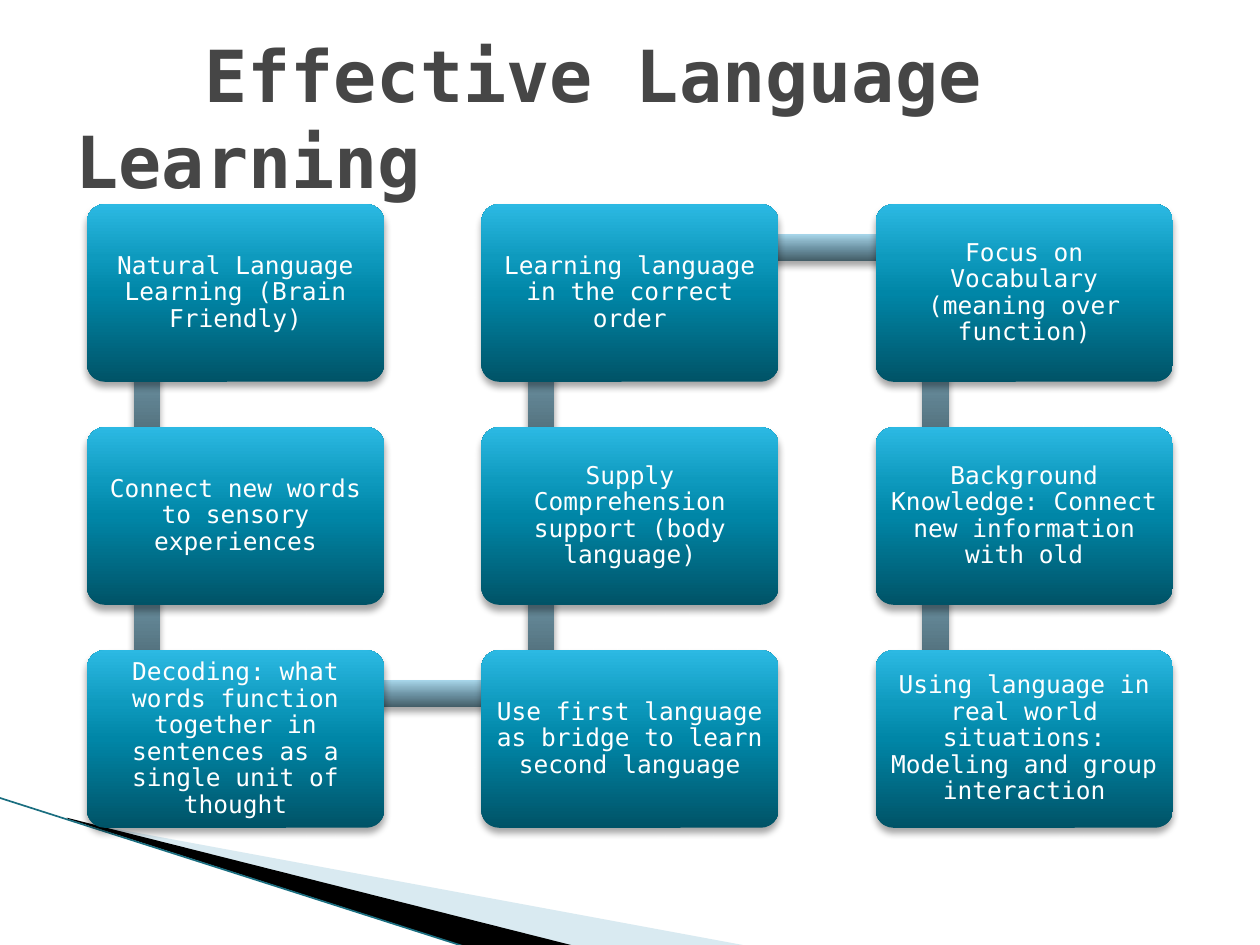
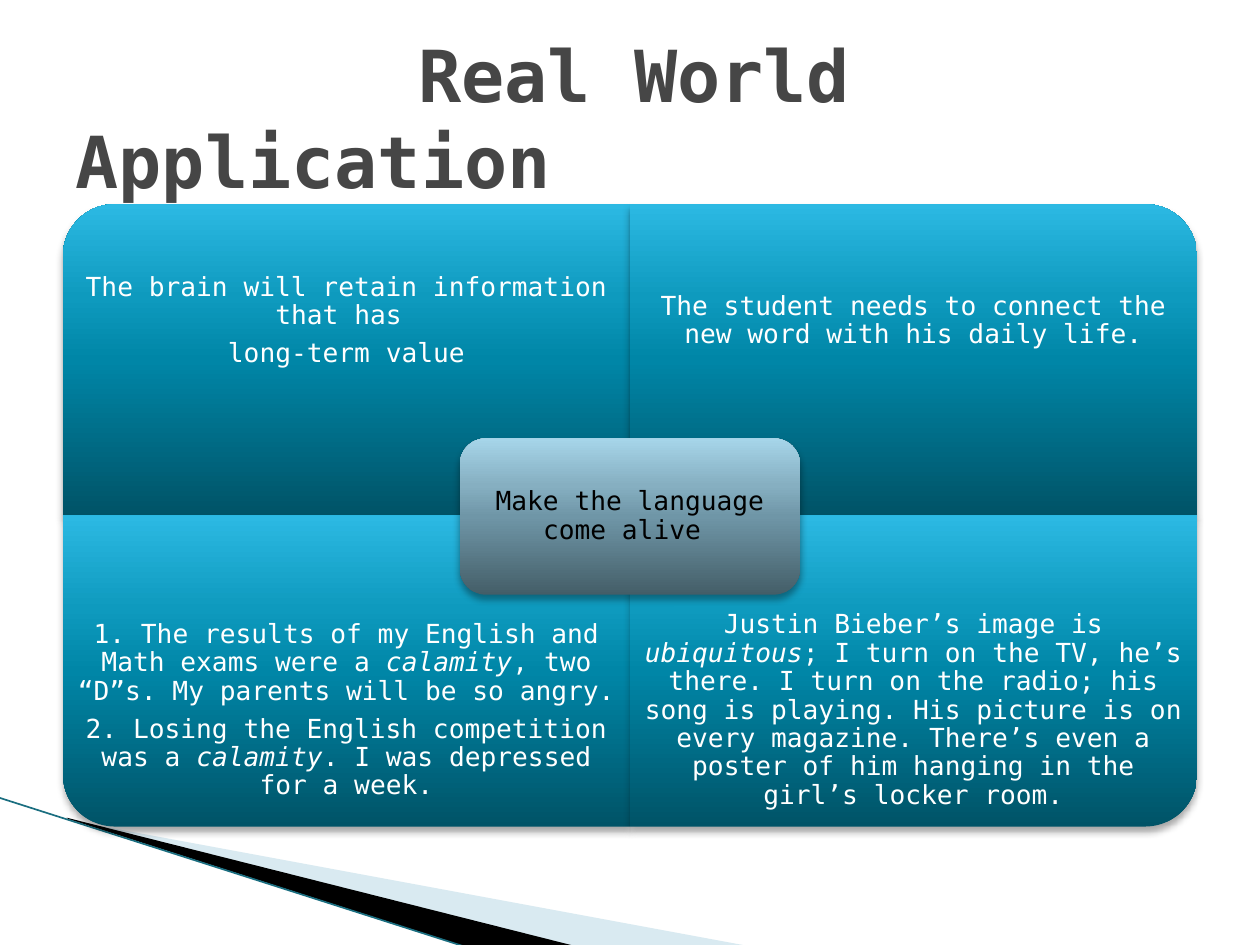
from lxml import etree
from pptx import Presentation, util as u
from pptx.dml.color import RGBColor
from pptx.enum import shapes, text
from pptx.oxml import parse_xml
from pptx.oxml.ns import nsdecls, qn

FONT = "DejaVu Sans Mono"
COLOURS = {"title": "464646", "white": "FFFFFF", "black": "000000",
           "pale band": "A0CBDC", "edge": "1A6E80"}
GRADIENTS = {
    "teal": {0: "005367", 50: "0086A7", 70: "0E9ABE", 100: "2CB9E3"},
    "grey": {0: "445E68", 50: "6F96A7", 70: "86AFC1", 100: "A6D5E9"},
}


def add_glossy(page, kind, left, top, width, height, gradient):
    """Add a shape with an upright gradient, no outline and a soft shadow below."""
    shape = page.shapes.add_shape(kind, u.Inches(left), u.Inches(top),
                                  u.Inches(width), u.Inches(height))
    shape.line.fill.background()
    properties = shape.element.spPr
    stops = "".join(f'<a:gs pos="{pos * 1000}"><a:srgbClr val="{colour}"/></a:gs>'
                    for pos, colour in GRADIENTS[gradient].items())
    properties.find(qn("a:ln")).addprevious(parse_xml(
        f'<a:gradFill {nsdecls("a")} rotWithShape="0"><a:gsLst>{stops}</a:gsLst>'
        '<a:lin ang="16200000" scaled="0"/></a:gradFill>'))
    properties.append(parse_xml(
        f'<a:effectLst {nsdecls("a")}><a:outerShdw blurRad="{u.Pt(4)}" dist="{u.Pt(3)}" '
        'dir="5400000" rotWithShape="0"><a:srgbClr val="000000"><a:alpha val="35000"/>'
        '</a:srgbClr></a:outerShdw></a:effectLst>'))
    return shape


def write_text(box, paragraphs, size, colour, inset):
    """Fill a box with centred paragraphs; every second *-separated part is italic."""
    frame = box.text_frame
    frame.word_wrap = True
    frame.vertical_anchor = text.MSO_ANCHOR.MIDDLE
    frame.margin_left = frame.margin_right = u.Inches(inset)
    frame.margin_top = frame.margin_bottom = u.Inches(inset)
    for number, content in enumerate(paragraphs):
        para = frame.add_paragraph() if number else frame.paragraphs[0]
        para.alignment = text.PP_ALIGN.CENTER
        para.line_spacing = 0.9
        para.space_after = u.Pt(5.5)
        para.font.name = FONT
        para.font.size = u.Pt(size)
        para.font.color.rgb = RGBColor.from_string(COLOURS[colour])
        for part, words in enumerate(content.split("*")):
            span = para.add_run()
            span.text = words
            if part % 2:
                span.font.italic = True


deck = Presentation()
deck.slide_width, deck.slide_height = u.Inches(10), u.Inches(7.5)
layout = deck.slide_layouts[5]

# Titles: the first line is indented by a number of character widths
pages = []
for title_words, indent in [("Effective Language Learning", 3),
                            ("Real World Application", 8)]:
    page = deck.slides.add_slide(layout)
    title = page.shapes.title
    title.left, title.top = u.Inches(0.5), u.Inches(0.3)
    title.width, title.height = u.Inches(9), u.Inches(1.25)
    frame = title.text_frame
    frame.text = title_words
    frame.word_wrap = True
    frame.auto_size = text.MSO_AUTO_SIZE.NONE
    frame.vertical_anchor = text.MSO_ANCHOR.MIDDLE
    para = frame.paragraphs[0]
    para.alignment = text.PP_ALIGN.LEFT
    properties = para._p.get_or_add_pPr()
    properties.set("marL", "0")
    properties.set("indent", str(u.Inches(indent * 0.34)))
    para.font.name, para.font.size, para.font.bold = FONT, u.Pt(41), True
    para.font.color.rgb = RGBColor.from_string(COLOURS["title"])
    pages.append(page)
steps_page, application_page = pages

# Swoosh in the bottom corner, moved to the layout so both slides share it
bands = [("pale band", [(0.55, 6.51), (5.95, 7.51), (4.56, 7.51), (0.55, 6.5)]),
         ("black", [(0.53, 6.49), (4.57, 7.51), (3.72, 7.52), (0.54, 6.5)])]
for colour, points in bands:
    corners = [(u.Inches(x), u.Inches(y)) for x, y in points]
    builder = steps_page.shapes.build_freeform(*corners[0])
    builder.add_line_segments(corners[1:], close=True)
    band = builder.convert_to_shape()
    band.shadow.inherit = False
    band.line.fill.background()
    band.fill.solid()
    band.fill.fore_color.rgb = RGBColor.from_string(COLOURS[colour])
    if colour == "pale band":
        tint = band.element.spPr.find(qn("a:solidFill"))[0]
        etree.SubElement(tint, qn("a:alpha")).set("val", "40000")
    layout.shapes.element.append(band.element)
edge = steps_page.shapes.add_connector(
    shapes.MSO_CONNECTOR.STRAIGHT, u.Inches(-0.01), u.Inches(6.33),
    u.Inches(3.71), u.Inches(7.52))
edge.line.color.rgb = RGBColor.from_string(COLOURS["edge"])
edge.line.width = u.Pt(0.95)
etree.SubElement(edge.element.spPr, qn("a:effectLst"))
layout.shapes.element.append(edge.element)

# Slide 1: nine steps that wind down, up and down through three columns
steps = [
    (0, 0, "Natural Language Learning (Brain Friendly)"),
    (0, 1, "Connect new words to sensory experiences"),
    (0, 2, "Decoding: what words function together in sentences as a single unit of thought"),
    (1, 2, "Use first language as bridge to learn second language"),
    (1, 1, "Supply Comprehension support (body language)"),
    (1, 0, "Learning language in the correct order"),
    (2, 0, "Focus on Vocabulary (meaning over function)"),
    (2, 1, "Background Knowledge: Connect new information with old"),
    (2, 2, "Using language in real world situations: Modeling and group interaction"),
]
COLUMN_STEP, ROW_STEP, BAR = 3.13, 1.77, 0.21
places = [(0.69 + COLUMN_STEP * column, 1.62 + ROW_STEP * row) for column, row, _ in steps]
for number, (column, row, words) in enumerate(steps):
    left, top = places[number]
    if number + 1 < len(steps):
        next_left, next_top = places[number + 1]
        if next_left == left:
            bar = (left + 0.37, min(top, next_top) + 0.35, BAR, ROW_STEP)
        else:
            bar = (left + 0.48, top + 0.24, COLUMN_STEP, BAR)
        add_glossy(steps_page, shapes.MSO_SHAPE.RECTANGLE, *bar, "grey")
    card = add_glossy(steps_page, shapes.MSO_SHAPE.ROUNDED_RECTANGLE,
                      left, top, 2.36, 1.41, "teal")
    card.adjustments[0] = 0.1
    write_text(card, [words], 14, "white", 0.06)

# Slide 2: four quadrants, each with its rounded corner outwards
quadrants = [
    (0, 0, 270, ["The brain will retain information that has ", "long-term value"]),
    (1, 0, 0, ["The student needs to connect the new word with his daily life."]),
    (0, 1, 180, ["1. The results of my English and Math exams were a *calamity*, "
                 "two “D”s. My parents will be so angry.",
                 "2. Losing the English competition was a *calamity*. "
                 "I was depressed for a week."]),
    (1, 1, 90, ["Justin Bieber’s image is *ubiquitous*; I turn on the TV, he’s there. "
                "I turn on the radio; his song is playing. His picture is on every "
                "magazine. There’s even a poster of him hanging in the girl’s "
                "locker room."]),
]
WIDE, HIGH, TEXT_HIGH = 4.5, 2.47, 1.86
for column, row, turn, paragraphs in quadrants:
    left, top = 0.5 + WIDE * column, 1.62 + HIGH * row
    width, height = (HIGH, WIDE) if turn % 180 else (WIDE, HIGH)
    quadrant = add_glossy(application_page, shapes.MSO_SHAPE.ROUND_1_RECTANGLE,
                          left + (WIDE - width) / 2, top + (HIGH - height) / 2,
                          width, height, "teal")
    quadrant.rotation = turn
    box = application_page.shapes.add_textbox(
        u.Inches(left), u.Inches(top + row * (HIGH - TEXT_HIGH + 0.01)),
        u.Inches(WIDE), u.Inches(TEXT_HIGH))
    write_text(box, paragraphs, 15, "white", 0.11)
centre = add_glossy(application_page, shapes.MSO_SHAPE.ROUNDED_RECTANGLE,
                    3.65, 3.48, 2.7, 1.24, "grey")
write_text(centre, ["Make the language come alive "], 15, "black", 0.06)

deck.save("out.pptx")
